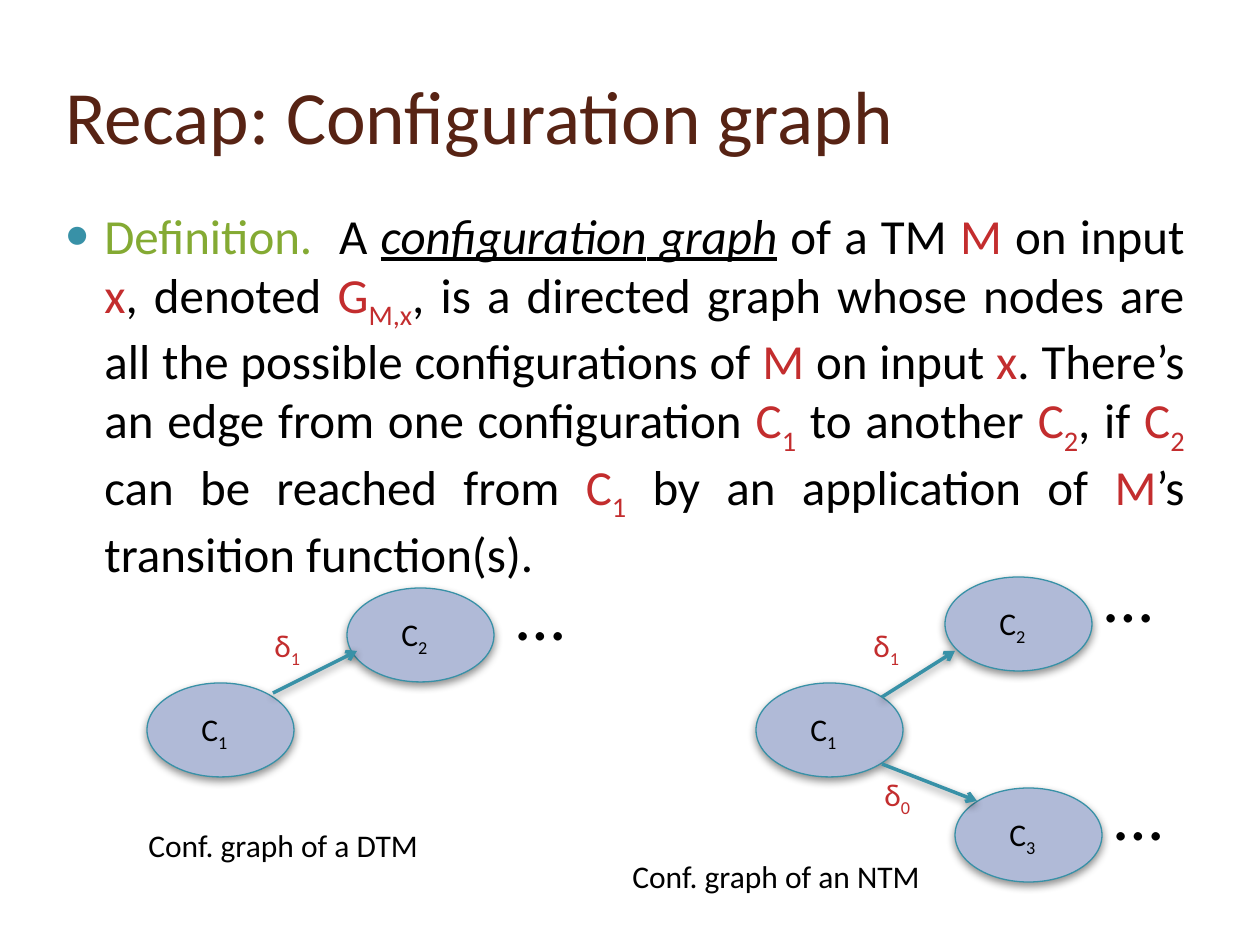
from lxml.etree import SubElement
from pptx import Presentation
from pptx.dml.color import RGBColor
from pptx.enum.shapes import MSO_CONNECTOR as Link, MSO_SHAPE as Shape
from pptx.enum.text import MSO_ANCHOR as Anchor, PP_ALIGN as Align
from pptx.oxml.ns import qn
from pptx.util import Emu, Pt

SCALE = 914400 / 126
BLACK, RED, TEAL = "000000", "C32D2E", "3891A7"
STYLES = {
    "g": {"color": "84AA33"},
    "r": {"color": RED},
    "u": {"italic": True, "line": True},
    "_": {"line": True},
}
BODY = (
    "|g:Definition.  |A |u:configuration||_: ||u:graph| of a TM |r:M| on input "
    "|r:x|, denoted |r:G_M,x|, is a directed graph whose nodes are all the "
    "possible configurations of |r:M| on input |r:x|. There’s an edge from one "
    "configuration |r:C_1| to another |r:C_2|, if |r:C_2| can be reached from "
    "|r:C_1| by an application of |r:M|’s transition function(s)."
)
NODES = [
    ("C_1", 147, 683), ("C_2", 347, 588),
    ("C_1", 756, 683), ("C_2", 945, 577), ("C_3", 955, 788),
]
EDGES = [
    (273, 693, 357, 651), (882, 697, 955, 651), (882, 764, 977, 801),
]
DELTAS = [("δ_1", 262, 620), ("δ_1", 861, 620), ("δ_0", 872, 769)]
NOTES = [
    ("Conf. graph of a DTM", 136, 820, 305),
    ("Conf. graph of an NTM", 620, 851, 325),
]
DOTS = [(504, 564), (1092, 546), (1102, 764)]


def px(num):
    return Emu(round(num * SCALE))


def rgb(code):
    return RGBColor.from_string(code)


def add_run(par, words, size, color, italic=False, line=False, sub=False):
    run = par.add_run()
    run.text = words
    font = run.font
    font.name, font.size = "Calibri", Pt(size)
    font.italic, font.underline = italic, line
    font.color.rgb = rgb(color)
    if sub:
        run._r.get_or_add_rPr().set("baseline", "-25000")


def add_text(slide, words, left, top, wide, high, size=18, color=BLACK,
             align=Align.LEFT, anchor=Anchor.TOP):
    box = slide.shapes.add_textbox(px(left), px(top), px(wide), px(high))
    frame = box.text_frame
    frame.word_wrap = True
    frame.vertical_anchor = anchor
    par = frame.paragraphs[0]
    par.alignment = align
    for pos, part in enumerate(words.split("|")):
        form = {"color": color}
        if pos % 2:
            key, _, part = part.partition(":")
            form.update(STYLES[key])
        base, _, low = part.partition("_")
        if base:
            add_run(par, base, size, **form)
        if low:
            add_run(par, low, size, sub=True, **form)
    return par


def add_bullet(par):
    par.space_before = Pt(6)
    props = par._p.get_or_add_pPr()
    props.set("marL", str(px(50)))
    props.set("indent", str(-px(39)))
    tint = SubElement(props, qn("a:buClr"))
    SubElement(tint, qn("a:srgbClr"), val=TEAL)
    SubElement(props, qn("a:buSzPct"), val="80000")
    SubElement(props, qn("a:buFont"), typeface="Calibri")
    SubElement(props, qn("a:buChar"), char="●")


def add_shadow(item):
    list_ = SubElement(item._element.spPr, qn("a:effectLst"))
    cast = SubElement(list_, qn("a:outerShdw"), blurRad=str(Pt(5)),
                      dist=str(Pt(2)), dir="5400000", rotWithShape="0")
    tint = SubElement(cast, qn("a:srgbClr"), val=BLACK)
    SubElement(tint, qn("a:alpha"), val="43000")


def set_line(item, width):
    item.line.color.rgb = rgb(TEAL)
    item.line.width = Pt(width)


def add_node(slide, name, left, top):
    node = slide.shapes.add_shape(Shape.OVAL, px(left), px(top), px(147), px(94))
    node.fill.solid()
    node.fill.fore_color.rgb = rgb("B0BAD7")
    set_line(node, 0.75)
    add_shadow(node)
    add_text(slide, name, left + 42, top + 21, 74, 53)


def add_edge(slide, *ends):
    edge = slide.shapes.add_connector(Link.STRAIGHT, *map(px, ends))
    set_line(edge, 2)
    SubElement(edge.line._get_or_add_ln(), qn("a:tailEnd"), type="arrow")
    add_shadow(edge)


def main():
    deck = Presentation()
    deck.slide_width, deck.slide_height = px(1260), px(945)
    slide = deck.slides.add_slide(deck.slide_layouts[6])
    add_text(slide, "Recap: Configuration graph", 53, 42, 1113, 145,
             size=43, color="572314", anchor=Anchor.MIDDLE)
    add_bullet(add_text(slide, BODY, 42, 199, 1155, 693,
                        size=28, align=Align.JUSTIFY))
    for node in NODES:
        add_node(slide, *node)
    for edge in EDGES:
        add_edge(slide, *edge)
    for name, left, top in DELTAS:
        add_text(slide, name, left, top, 74, 50, color=RED)
    for words, left, top, wide in NOTES:
        add_text(slide, words, left, top, wide, 50)
    for left, top in DOTS:
        add_text(slide, "…", left, top, 158, 97, size=40)
    deck.save("out.pptx")


if __name__ == "__main__":
    main()
